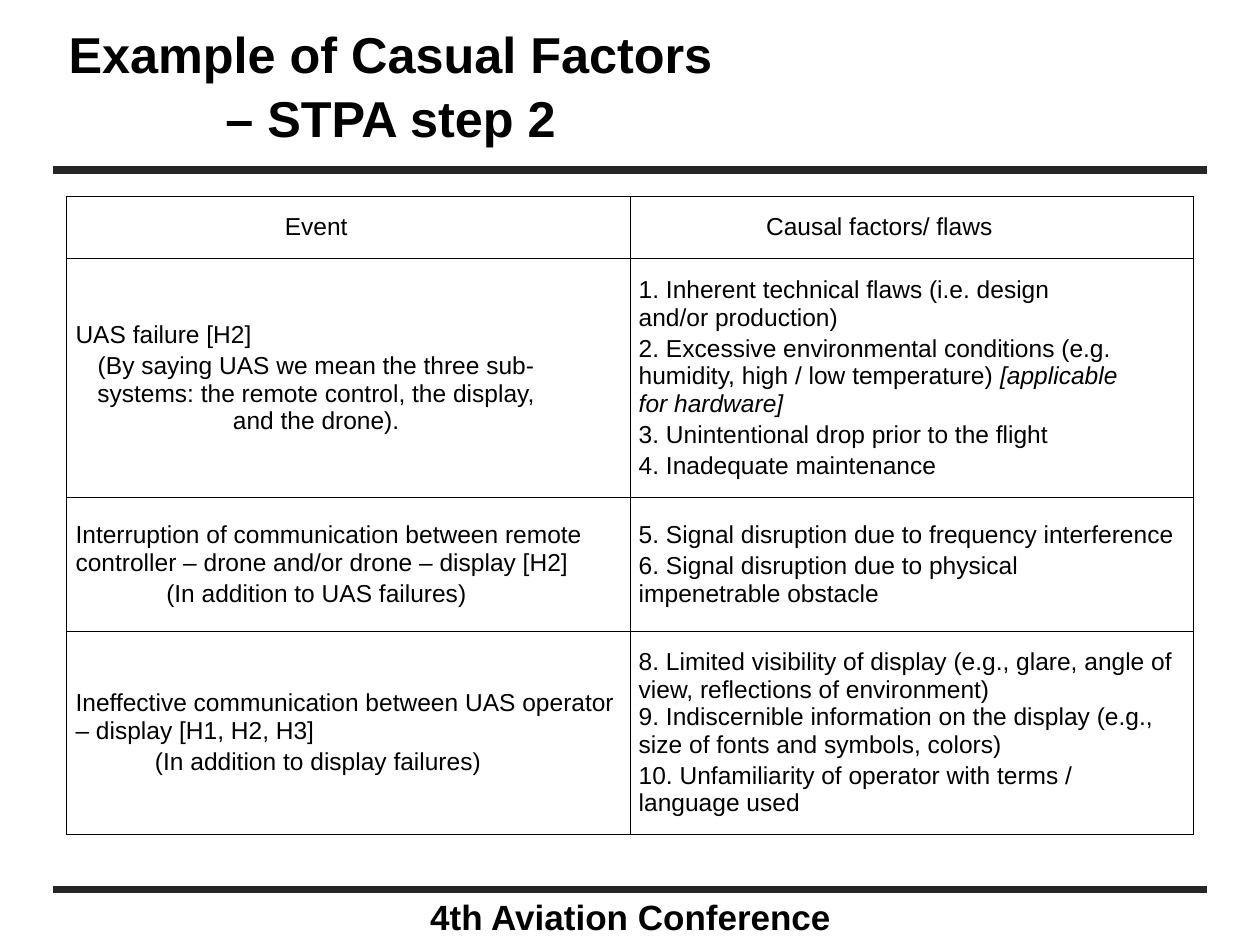
from lxml.etree import SubElement
from pptx import Presentation
from pptx.dml.color import RGBColor
from pptx.enum.shapes import MSO_CONNECTOR
from pptx.enum.text import MSO_ANCHOR, MSO_AUTO_SIZE, PP_ALIGN
from pptx.oxml.ns import qn
from pptx.util import Inches, Pt

BLACK = RGBColor(0x00, 0x00, 0x00)
RULE = RGBColor(0x26, 0x26, 0x26)
LEFT, CENTER = PP_ALIGN.LEFT, PP_ALIGN.CENTER
NARROW, WIDE = 0.58, 0.07  # right cell margins

# Each cell: right margin, then paragraphs as (alignment, left indent, runs);
# a run is (text, italic)


def para(text, align=LEFT, indent=0, italic_end=""):
    runs = [(text, False)]
    if italic_end:
        runs.append((italic_end, True))
    return align, indent, runs


ROWS = [
    (0.49, [
        (NARROW, [para("Event", CENTER)]),
        (NARROW, [para("Causal factors/ flaws", CENTER)]),
    ]),
    (1.9, [
        (NARROW, [
            para("UAS failure [H2]"),
            para("(By saying UAS we mean the three sub-systems: the remote "
                 "control, the display, and the drone).", CENTER),
        ]),
        (NARROW, [
            para("1. Inherent technical flaws (i.e. design and/or production)"),
            para("2. Excessive environmental conditions (e.g. humidity, "
                 "high / low temperature) ",
                 italic_end="[applicable for hardware]"),
            para("3. Unintentional drop prior to the flight"),
            para("4. Inadequate maintenance"),
        ]),
    ]),
    (1.06, [
        (WIDE, [
            para("Interruption of communication between remote controller – "
                 "drone and/or drone – display [H2]"),
            para("(In addition to UAS failures)", indent=0.72),
        ]),
        (WIDE, [
            para("5. Signal disruption due to frequency interference"),
            para("6. Signal disruption due to physical\vimpenetrable obstacle"),
        ]),
    ]),
    (1.61, [
        (WIDE, [
            para("Ineffective communication between UAS operator – display "
                 "[H1, H2, H3]"),
            para("(In addition to display failures)", indent=0.63),
        ]),
        (WIDE, [
            para("8. Limited visibility of display (e.g., glare, angle of view, "
                 "reflections of environment)\v9. Indiscernible information on "
                 "the display (e.g., size of fonts and symbols, colors)"),
            para("10. Unfamiliarity of operator with terms /\vlanguage used"),
        ]),
    ]),
]


class SlideBuilder:
    def __init__(self, slide):
        self.s = slide

    def style(self, font, size, **extra):
        values = {"name": "Arial", "size": Pt(size), **extra}
        for name, value in values.items():
            setattr(font, name, value)
        font.color.rgb = BLACK

    def heading(self, shape, text, size, anchor, line_spacing=1.0):
        tf = shape.text_frame
        settings = {"word_wrap": True, "auto_size": MSO_AUTO_SIZE.NONE,
                    "vertical_anchor": anchor}
        for side in ("left", "right", "top", "bottom"):
            settings[f"margin_{side}"] = Inches(0.05)
        for name, value in settings.items():
            setattr(tf, name, value)
        p = tf.paragraphs[0]
        p.alignment, p.line_spacing = CENTER, line_spacing
        r = p.add_run()
        r.text = text
        self.style(r.font, size, bold=True)

    def title(self, text, x, y, w, h):
        shape = self.s.shapes.title
        shape.left, shape.top = Inches(x), Inches(y)
        shape.width, shape.height = Inches(w), Inches(h)
        self.heading(shape, text, 28.8, MSO_ANCHOR.MIDDLE, 1.05)

    def footer(self, text, x, y, w, h):
        box = self.s.shapes.add_textbox(*map(Inches, (x, y, w, h)))
        self.heading(box, text, 20, MSO_ANCHOR.TOP)

    def rule(self, y):
        line = self.s.shapes.add_connector(
            MSO_CONNECTOR.STRAIGHT, *map(Inches, (0.42, y, 9.58, y)))
        line.line.color.rgb = RULE
        line.line.width = Pt(4.5)
        SubElement(line._element.spPr, qn("a:effectLst"))

    def borders(self, cell):
        tc_pr = cell._tc.get_or_add_tcPr()
        for i, side in enumerate(("lnL", "lnR", "lnT", "lnB")):
            ln = tc_pr.makeelement(qn(f"a:{side}"), {"w": str(Pt(0.5))})
            fill = SubElement(ln, qn("a:solidFill"))
            SubElement(fill, qn("a:srgbClr"), val=str(BLACK))
            tc_pr.insert(i, ln)

    def cell(self, cell, right, paragraphs):
        settings = {"margin_left": Inches(0.07), "margin_right": Inches(right),
                    "margin_top": 0, "margin_bottom": 0,
                    "vertical_anchor": MSO_ANCHOR.MIDDLE}
        for name, value in settings.items():
            setattr(cell, name, value)
        cell.fill.background()
        self.borders(cell)
        tf = cell.text_frame
        for i, (align, indent, runs) in enumerate(paragraphs):
            p = tf.add_paragraph() if i else tf.paragraphs[0]
            p.alignment = align
            if i:
                p.space_before = Pt(2)
            if indent:
                p._p.get_or_add_pPr().set("marL", str(Inches(indent)))
            for text, italic in runs:
                for j, part in enumerate(text.split("\v")):
                    if j:
                        p.add_line_break()
                    r = p.add_run()
                    r.text = part
                    self.style(r.font, 14, italic=italic)

    def table(self, x, y, w, rows):
        total = sum(height for height, _ in rows)
        table = self.s.shapes.add_table(
            len(rows), 2, *map(Inches, (x, y, w, total))).table
        table.first_row = table.horz_banding = False
        for i, (height, cells) in enumerate(rows):
            table.rows[i].height = Inches(height)
            for j, (right, paragraphs) in enumerate(cells):
                self.cell(table.cell(i, j), right, paragraphs)


def main():
    prs = Presentation()
    prs.slide_width, prs.slide_height = Inches(10), Inches(7.5)
    b = SlideBuilder(prs.slides.add_slide(prs.slide_layouts[5]))
    for y in (1.35, 7.06):
        b.rule(y)
    b.footer("4th Aviation Conference", 1.42, 7.06, 7.17, 0.41)
    b.title("Example of Casual Factors – STPA step 2", 0.45, 0.19, 5.3, 0.95)
    b.table(0.53, 1.56, 8.94, ROWS)
    prs.save("out.pptx")


if __name__ == "__main__":
    main()
